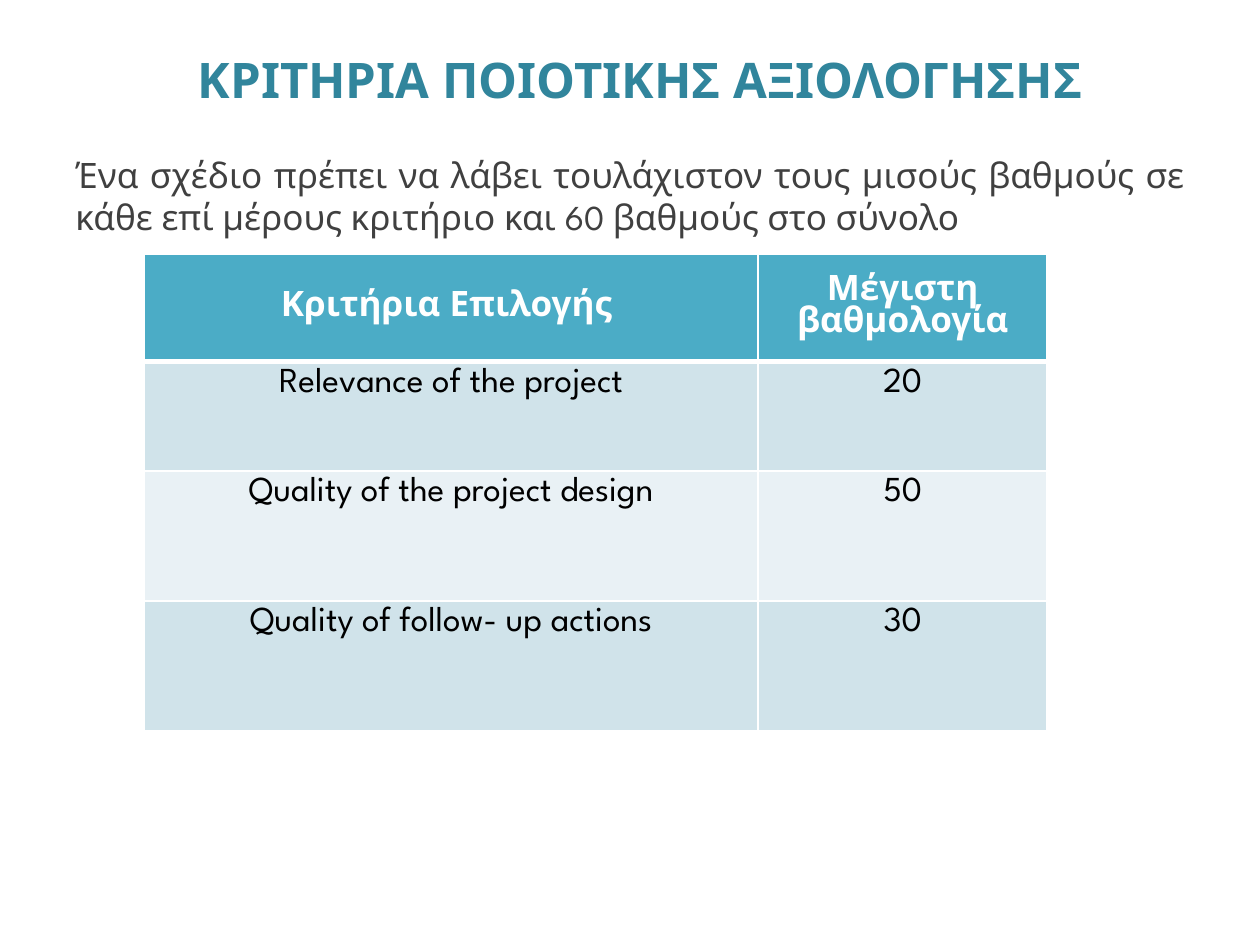
from lxml.etree import SubElement
from pptx import Presentation
from pptx.dml.color import RGBColor
from pptx.enum.text import MSO_ANCHOR, PP_ALIGN
from pptx.oxml.ns import qn
from pptx.util import Pt

FONT = "League Spartan"
HEAD = ["Κριτήρια Επιλογής ", "Μέγιστη βαθμολογία"]
ROWS = [
    ["Relevance of the project", "20"],
    ["Quality of the project design", "50"],
    ["Quality of follow- up actions", "30"],
]


def color(code):
    return RGBColor.from_string(code)


def write(frame, text, size=20, fill="000000", bold=False,
          align=PP_ALIGN.CENTER):
    para = frame.paragraphs[0]
    para.alignment = align
    run = para.add_run()
    run.text = text
    font = run.font
    font.name, font.size, font.bold = FONT, Pt(size), bold
    font.color.rgb = color(fill)


def add_box(slide, box, text, anchor=MSO_ANCHOR.TOP, **style):
    frame = slide.shapes.add_textbox(*map(Pt, box)).text_frame
    frame.word_wrap = True
    frame.vertical_anchor = anchor
    write(frame, text, **style)


def edge(cell, tag, width):
    props = cell._tc.get_or_add_tcPr()
    line = SubElement(props, qn(f"a:{tag}"), w=str(Pt(width)))
    fill = SubElement(line, qn("a:solidFill"))
    SubElement(fill, qn("a:srgbClr"), val="FFFFFF")


def add_cell(cell, text, row):
    top = row == 0
    cell.vertical_anchor = MSO_ANCHOR.MIDDLE if top else MSO_ANCHOR.TOP
    for tag in ("lnL", "lnR", "lnT", "lnB"):
        thick = (top and tag == "lnB") or (row == 1 and tag == "lnT")
        edge(cell, tag, 3 if thick else 1)
    cell.fill.solid()
    shade = "4BACC6" if top else ("E9F1F5", "D0E3EA")[row % 2]
    cell.fill.fore_color.rgb = color(shade)
    write(cell.text_frame, text, fill="FFFFFF" if top else "000000", bold=top)


def add_grid(slide, box, cols, highs):
    data = [HEAD, *ROWS]
    grid = slide.shapes.add_table(len(data), len(cols), *map(Pt, box)).table
    for col, share in zip(grid.columns, cols):
        col.width = Pt(box[2] * share)
    for row, high in zip(grid.rows, highs):
        row.height = Pt(high)
    for i, texts in enumerate(data):
        for j, text in enumerate(texts):
            add_cell(grid.cell(i, j), text, i)


def main():
    deck = Presentation()
    deck.slide_width, deck.slide_height = Pt(720), Pt(540)
    slide = deck.slides.add_slide(deck.slide_layouts[6])
    add_box(slide, (41.8, 12.2, 648, 66.2), "ΚΡΙΤΗΡΙΑ ΠΟΙΟΤΙΚΗΣ ΑΞΙΟΛΟΓΗΣΗΣ",
            anchor=MSO_ANCHOR.MIDDLE, size=28, fill="31859C", bold=True)
    add_box(slide, (36, 84.2, 648, 455.8),
            "Ένα σχέδιο πρέπει να λάβει τουλάχιστον τους μισούς βαθμούς "
            "σε κάθε επί μέρους κριτήριο και 60 βαθμούς στο σύνολο",
            fill="404040", align=PP_ALIGN.JUSTIFY)
    add_grid(slide, (82.4, 145.4, 516, 272.2), (0.68, 0.32),
             (61.2, 62.6, 74.2, 74.2))
    deck.save("out.pptx")


if __name__ == "__main__":
    main()
